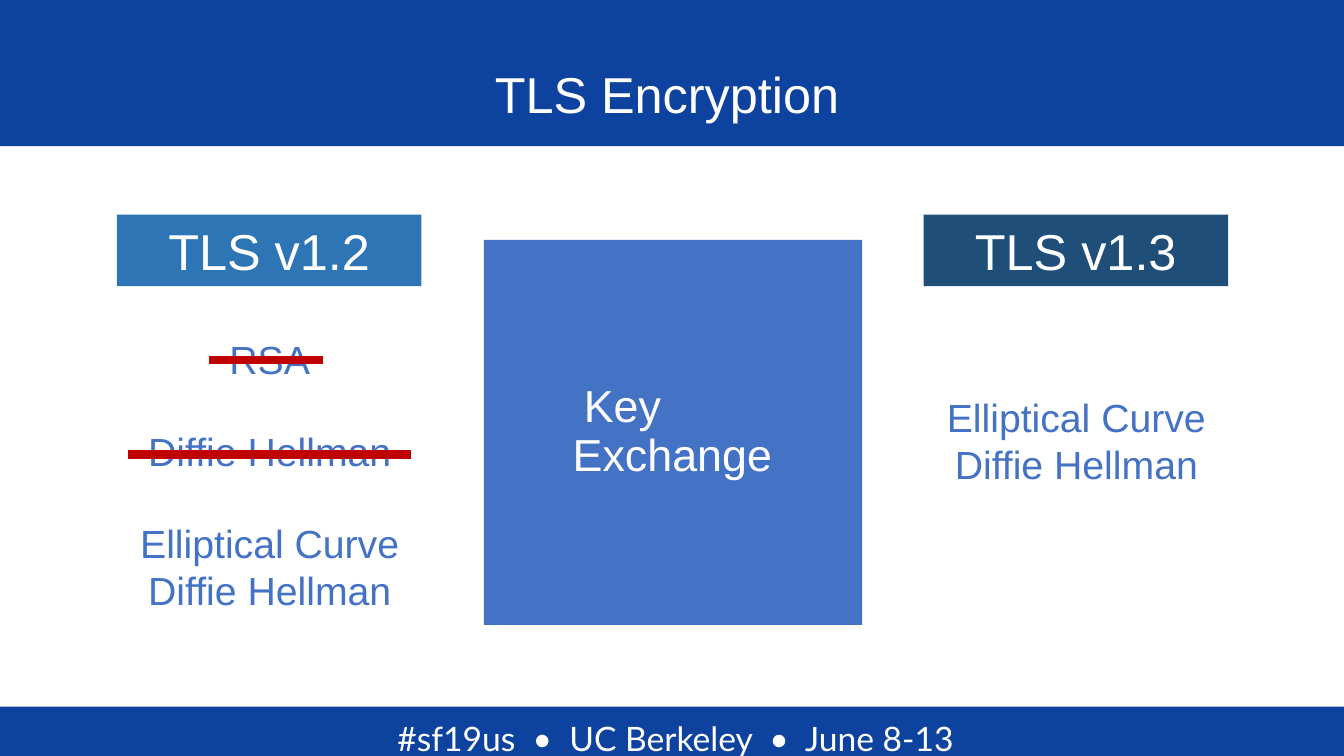
"""Build the TLS key exchange comparison slide."""
from dataclasses import dataclass

from lxml import etree
from pptx import Presentation
from pptx import util as u
from pptx.dml.color import RGBColor
from pptx.enum import shapes, text
from pptx.oxml.ns import qn

PX = 9144
NAVY = RGBColor(0x0D, 0x43, 0x9F)
BLUE = RGBColor(0x44, 0x72, 0xC4)
SKY = RGBColor(0x2E, 0x75, 0xB6)
DEEP = RGBColor(0x1F, 0x4E, 0x79)
RED = RGBColor(0xC0, 0x00, 0x00)
WHITE = RGBColor(0xFF, 0xFF, 0xFF)
LINE_GAP = 32


@dataclass(frozen=True)
class Line:
    """One paragraph and the points of space before it."""

    wording: str
    before: int = 0


@dataclass(frozen=True)
class Box:
    """A text box or, when filled, a rectangle; lengths in px."""

    left: int
    top: int
    width: int
    height: int
    lines: tuple[Line, ...] = ()
    size: int = 36
    color: RGBColor = WHITE
    fill: RGBColor | None = None
    font: str = "Arial"
    insets: tuple[int, int, int, int] = (10, 5, 10, 5)
    anchor: text.MSO_ANCHOR = text.MSO_ANCHOR.TOP
    align: text.PP_ALIGN = text.PP_ALIGN.CENTER
    spacing: float = 1.0
    margin: int = 0
    indent: int = 0


@dataclass(frozen=True)
class Strike:
    """A horizontal strike-through bar; lengths in px."""

    start: int
    end: int
    y: int


CURVE = Line("Elliptical Curve")
HELLMAN = Line("Diffie Hellman")

BOXES = (
    Box(0, 0, 1333, 145, fill=NAVY),
    Box(0, 701, 1333, 49, fill=NAVY),
    Box(67, 705, 1206, 45, (Line("#sf19us  •  UC Berkeley  •  June 8-13"),), 24,
        font="Lato", insets=(13, 7, 13, 7)),
    Box(480, 238, 375, 382, (Line("Key\vExchange"),), 32, fill=BLUE,
        insets=(30, 30, 30, 30), anchor=text.MSO_ANCHOR.MIDDLE,
        align=text.PP_ALIGN.LEFT, spacing=0.9, margin=58, indent=11),
    Box(77, 64, 1179, 48, (Line("TLS Encryption"),), insets=(0, 5, 10, 5), spacing=0.9),
    Box(116, 213, 302, 71, (Line("TLS v1.2"),), fill=SKY),
    Box(916, 213, 302, 71, (Line("TLS v1.3"),), fill=DEEP),
    Box(86, 328, 363, 293,
        (Line("RSA"), Line("Diffie Hellman", LINE_GAP),
         Line("Elliptical Curve", LINE_GAP), HELLMAN), 28, BLUE),
    Box(886, 385, 363, 104, (CURVE, HELLMAN), 28, BLUE),
)
STRIKES = (Strike(207, 320, 357), Strike(127, 408, 451))


def px(length: int) -> u.Emu:
    """Convert px to EMU."""
    return u.Emu(length * PX)


def write_lines(frame, box: Box) -> None:
    """Fill a text frame with the lines of a box."""
    frame.word_wrap = True
    frame.vertical_anchor = box.anchor
    (frame.margin_left, frame.margin_top,
     frame.margin_right, frame.margin_bottom) = map(px, box.insets)
    for index, line in enumerate(box.lines):
        paragraph = frame.add_paragraph() if index else frame.paragraphs[0]
        paragraph.text = line.wording
        paragraph.alignment = box.align
        paragraph.line_spacing = box.spacing
        if line.before:
            paragraph.space_before = u.Pt(line.before)
        if box.margin:
            properties = paragraph._p.get_or_add_pPr()
            properties.set("marL", str(px(box.margin)))
            properties.set("indent", str(px(box.indent)))
        paragraph.font.name = box.font
        paragraph.font.size = u.Pt(box.size)
        paragraph.font.color.rgb = box.color


def draw_box(slide, box: Box) -> None:
    """Draw a box on the slide."""
    place = [px(length) for length in (box.left, box.top, box.width, box.height)]
    if box.fill is None:
        shape = slide.shapes.add_textbox(*place)
    else:
        shape = slide.shapes.add_shape(shapes.MSO_SHAPE.RECTANGLE, *place)
        shape.shadow.inherit = False
        shape.fill.solid()
        shape.fill.fore_color.rgb = box.fill
        shape.line.fill.background()
    if box.lines:
        write_lines(shape.text_frame, box)


def draw_strike(slide, strike: Strike) -> None:
    """Draw a red bar through a retired method."""
    connector = slide.shapes.add_connector(
        shapes.MSO_CONNECTOR.STRAIGHT,
        px(strike.start), px(strike.y), px(strike.end), px(strike.y))
    connector.line.color.rgb = RED
    connector.line.width = u.Pt(6)
    etree.SubElement(connector._element.spPr, qn("a:effectLst"))


def main() -> None:
    """Build and save the slide."""
    presentation = Presentation()
    presentation.slide_width, presentation.slide_height = px(1333), px(750)
    slide = presentation.slides.add_slide(presentation.slide_layouts[6])
    for box in BOXES:
        draw_box(slide, box)
    for strike in STRIKES:
        draw_strike(slide, strike)
    presentation.save("out.pptx")


if __name__ == "__main__":
    main()
